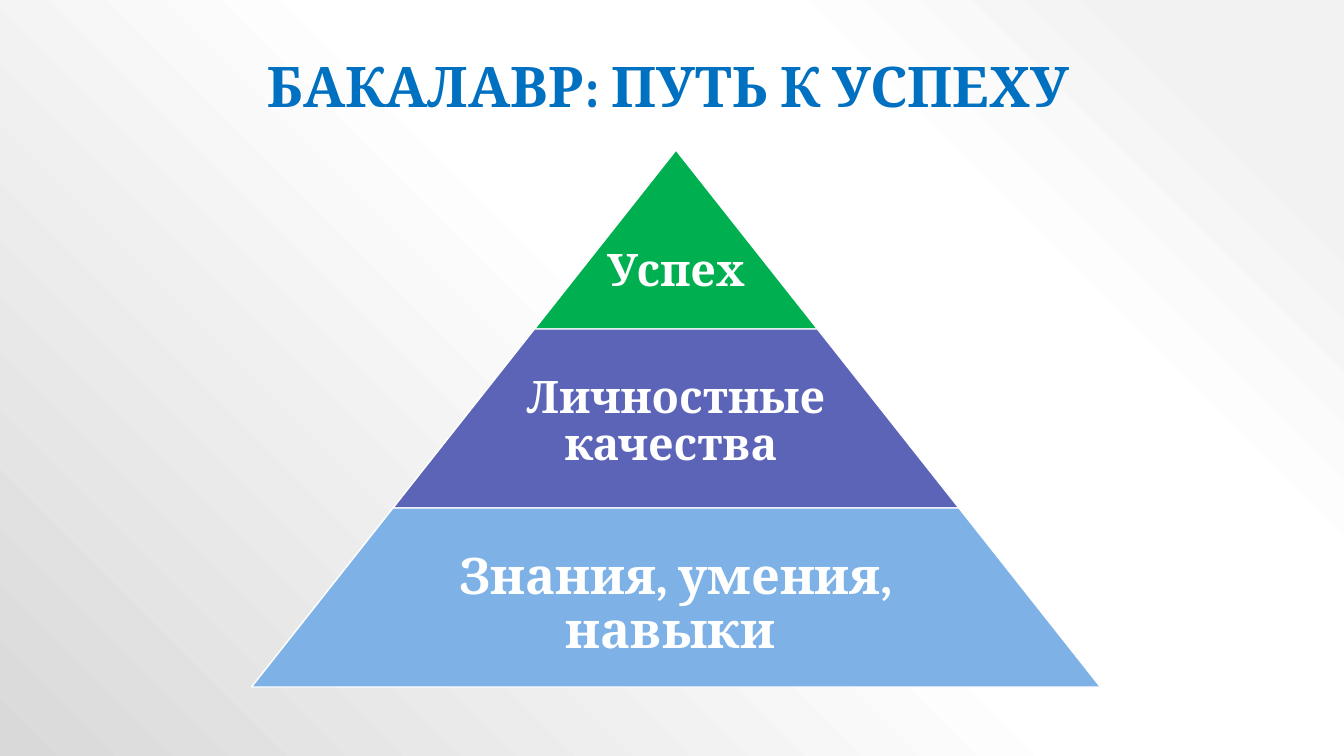
import pptx
import pptx.util
import pptx.oxml
import pptx.dml.color
import pptx.enum.shapes
import pptx.enum.text

RGB = pptx.dml.color.RGBColor
BLUE = RGB(0x00, 0x70, 0xC0)
GREEN = RGB(0x00, 0xB0, 0x50)
VIOLET = RGB(0x5C, 0x64, 0xB7)
SKY = RGB(0x7E, 0xB2, 0xE6)
WHITE = RGB(0xFF, 0xFF, 0xFF)
PALE = RGB(0xF2, 0xF2, 0xF2)
GREY = RGB(0xD9, 0xD9, 0xD9)

FONT = "Cambria"
TITLE = "БАКАЛАВР: ПУТЬ К УСПЕХУ"
LEVELS = [
    ("Успех", GREEN, 32, 283, 33),
    ("Личностные качества ", VIOLET, 32, 368, 4),
    ("Знания, умения, навыки ", SKY, 36, 551, 8),
]
STOPS = [(10, PALE), (28, WHITE), (48, WHITE), (100, GREY)]
MID, TOP, HIGH, STEP = 676, 150, 179, 283


def px(n):
    return round(n * 914400 / 100.8)


def box(left, top, wide, high):
    return px(left), px(top), px(wide), px(high)


def write(frame, text, size, color, space, anchor):
    frame.text = text
    frame.word_wrap = True
    frame.vertical_anchor = anchor
    para = frame.paragraphs[0]
    para.alignment = pptx.enum.text.PP_ALIGN.CENTER
    para.line_spacing = space
    font = para.runs[0].font
    font.name = FONT
    font.size = pptx.util.Pt(size)
    font.bold = True
    font.color.rgb = color


def paint(slide):
    stops = "".join(
        f'<a:gs pos="{pos * 1000}"><a:srgbClr val="{color}"/></a:gs>'
        for pos, color in STOPS
    )
    slide.background.fill.solid()
    props = slide.background._cSld.bg.bgPr
    grad = pptx.oxml.parse_xml(
        '<a:gradFill xmlns:a="http://schemas.openxmlformats.org/drawingml/2006/main"'
        f' rotWithShape="1"><a:gsLst>{stops}</a:gsLst><a:path path="circle">'
        '<a:fillToRect l="100000" b="100000"/></a:path></a:gradFill>'
    )
    props.replace(props[0], grad)


def main():
    deck = pptx.Presentation()
    deck.slide_width, deck.slide_height = px(1344), px(756)
    slide = deck.slides.add_slide(deck.slide_layouts[5])
    paint(slide)

    title = slide.shapes.title
    title.left, title.top, title.width, title.height = box(29, 29, 1278, 96)
    write(title.text_frame, TITLE, 40, BLUE, 0.9,
          pptx.enum.text.MSO_ANCHOR.BOTTOM)

    for row, (text, fill, size, room, drop) in enumerate(LEVELS):
        wide = STEP * (row + 1)
        top = TOP + HIGH * row
        level = slide.shapes.add_shape(
            pptx.enum.shapes.MSO_SHAPE.TRAPEZOID,
            *box(MID - wide / 2, top, wide, HIGH))
        level.adjustments[0] = STEP / 2 / HIGH
        level.shadow.inherit = False
        level.fill.solid()
        level.fill.fore_color.rgb = fill
        level.line.color.rgb = WHITE
        level.line.width = pptx.util.Pt(1)

        label = slide.shapes.add_textbox(
            *box(MID - room / 2, top + drop, room, HIGH))
        frame = label.text_frame
        frame.margin_left = frame.margin_right = px(4)
        frame.margin_top = frame.margin_bottom = px(4)
        write(frame, text, size, WHITE, 0.88,
              pptx.enum.text.MSO_ANCHOR.MIDDLE)

    deck.save("out.pptx")


if __name__ == "__main__":
    main()
